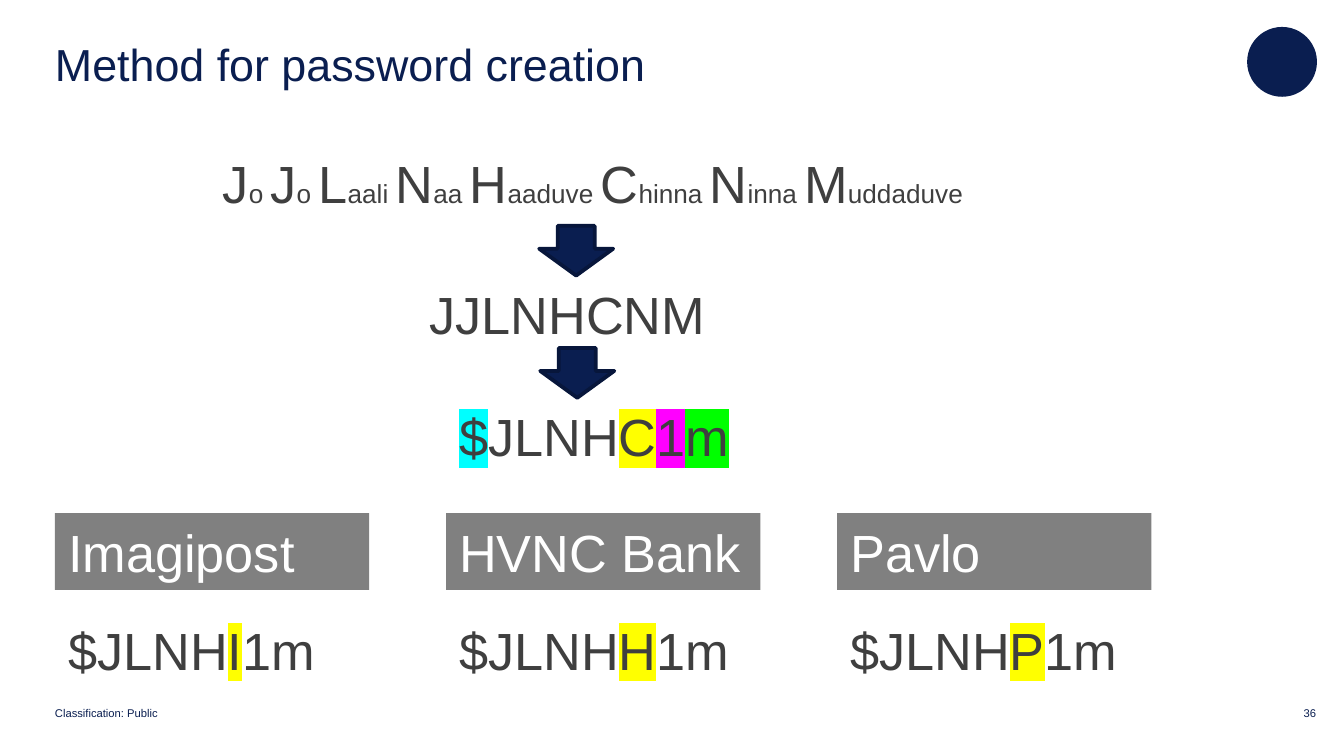
from lxml import etree
from pptx import Presentation
from pptx import util as u
from pptx.dml.color import RGBColor
from pptx.enum import shapes, text
from pptx.oxml.ns import qn

HUES = {
    "navy": "0A1E50", "edge": "07163B", "ink": "3F3F3F", "gray": "808080",
    "white": "FFFFFF", "cyan": "00FFFF", "yellow": "FFFF00",
    "pink": "FF00FF", "green": "00FF00",
}


def hue(name):
    return RGBColor.from_string(HUES[name])


class Deck:
    face = "Arial"
    big = 28
    small = 14

    def __init__(self, wide, high):
        self.file = Presentation()
        self.file.slide_width = u.Cm(wide)
        self.file.slide_height = u.Cm(high)
        self.slide = self.file.slides.add_slide(self.file.slide_layouts[6])

    def letter(self, item, runs, size, color, grow=True, wrap=True, inset=True):
        frame = item.text_frame
        frame.word_wrap = wrap
        frame.vertical_anchor = text.MSO_ANCHOR.TOP
        if grow:
            frame.auto_size = text.MSO_AUTO_SIZE.SHAPE_TO_FIT_TEXT
        if not inset:
            frame.margin_left = frame.margin_right = 0
            frame.margin_top = frame.margin_bottom = 0
        line = frame.paragraphs[0]
        line.alignment = text.PP_ALIGN.LEFT
        line.font.name = self.face
        line.font.color.rgb = hue(color)
        if size:
            line.font.size = u.Pt(size)
        for words, pts, mark in runs:
            run = line.add_run()
            run.text = words
            if pts:
                run.font.size = u.Pt(pts)
            if mark:
                glow = etree.SubElement(run.font._element, qn("a:highlight"))
                etree.SubElement(glow, qn("a:srgbClr")).set("val", HUES[mark])
        return frame

    def label(self, box, runs, size=big, color="ink", **style):
        item = self.slide.shapes.add_textbox(*map(u.Cm, box))
        return self.letter(item, runs, size, color, **style)

    def shape(self, kind, box, fill, edge=None):
        item = self.slide.shapes.add_shape(kind, *map(u.Cm, box))
        item.shadow.inherit = False
        item.fill.solid()
        item.fill.fore_color.rgb = hue(fill)
        if edge:
            item.line.color.rgb = hue(edge)
            item.line.width = u.Pt(2)
        else:
            item.line.fill.background()
        return item

    def banner(self, box, words):
        item = self.shape(shapes.MSO_SHAPE.RECTANGLE, box, "gray")
        self.letter(item, [(words, None, None)], self.big, "white")

    def arrow(self, left, top):
        item = self.shape(shapes.MSO_SHAPE.DOWN_ARROW, (left, top, 1.4, 0.94),
                          "navy", "edge")
        item.adjustments[0] = 0.5
        item.adjustments[1] = 0.54

    def footer(self, left, wide, words):
        frame = self.label((left, 13.39, wide, 0.23), [(words, None, None)],
                           6, "navy", wrap=False, inset=False)
        frame.paragraphs[0].line_spacing = 0.85


def main():
    deck = Deck(25.4, 14.29)
    edge, wide, high, step = 1.04, 5.94, 1.45, 7.39

    deck.shape(shapes.MSO_SHAPE.OVAL, (23.57, 0.51, 1.32, 1.32), "navy")
    deck.footer(edge, 1.98, "Classification: Public")
    deck.footer(24.64, 0.25, "36")
    title = deck.label((edge, 0.46, 22.28, 1.5),
                       [("Method for password creation", None, None)],
                       24, "navy", grow=False, inset=False)
    title.vertical_anchor = text.MSO_ANCHOR.MIDDLE

    song = "Jo Jo Laali Naa Haaduve Chinna Ninna Muddaduve".split()
    runs = []
    for place, word in enumerate(song, 1):
        gap = " " if place < len(song) else ""
        runs += [(word[0], deck.big, None), (word[1:] + gap, deck.small, None)]
    deck.label((3.96, 2.74, 15.65, high), runs, size=None)

    deck.label((7.87, 5.21, 6.1, high), [("JJLNHCNM", None, None)])
    marks = [("$", "cyan"), ("JLNH", None), ("C", "yellow"), ("1", "pink"),
             ("m", "green")]
    deck.label((edge + step, 7.52, wide, high),
               [(part, None, mark) for part, mark in marks])

    for col, name in enumerate(("Imagipost", "HVNC Bank", "Pavlo")):
        left = edge + col * step
        deck.label((left, 11.56, wide, high),
                   [("$JLNH", None, None), (name[0], None, "yellow"),
                    ("1m", None, None)])
        deck.banner((left, 9.7, wide, high), name)

    deck.arrow(10.19, 4.27)
    deck.arrow(10.21, 6.58)
    deck.file.save("out.pptx")


if __name__ == "__main__":
    main()
